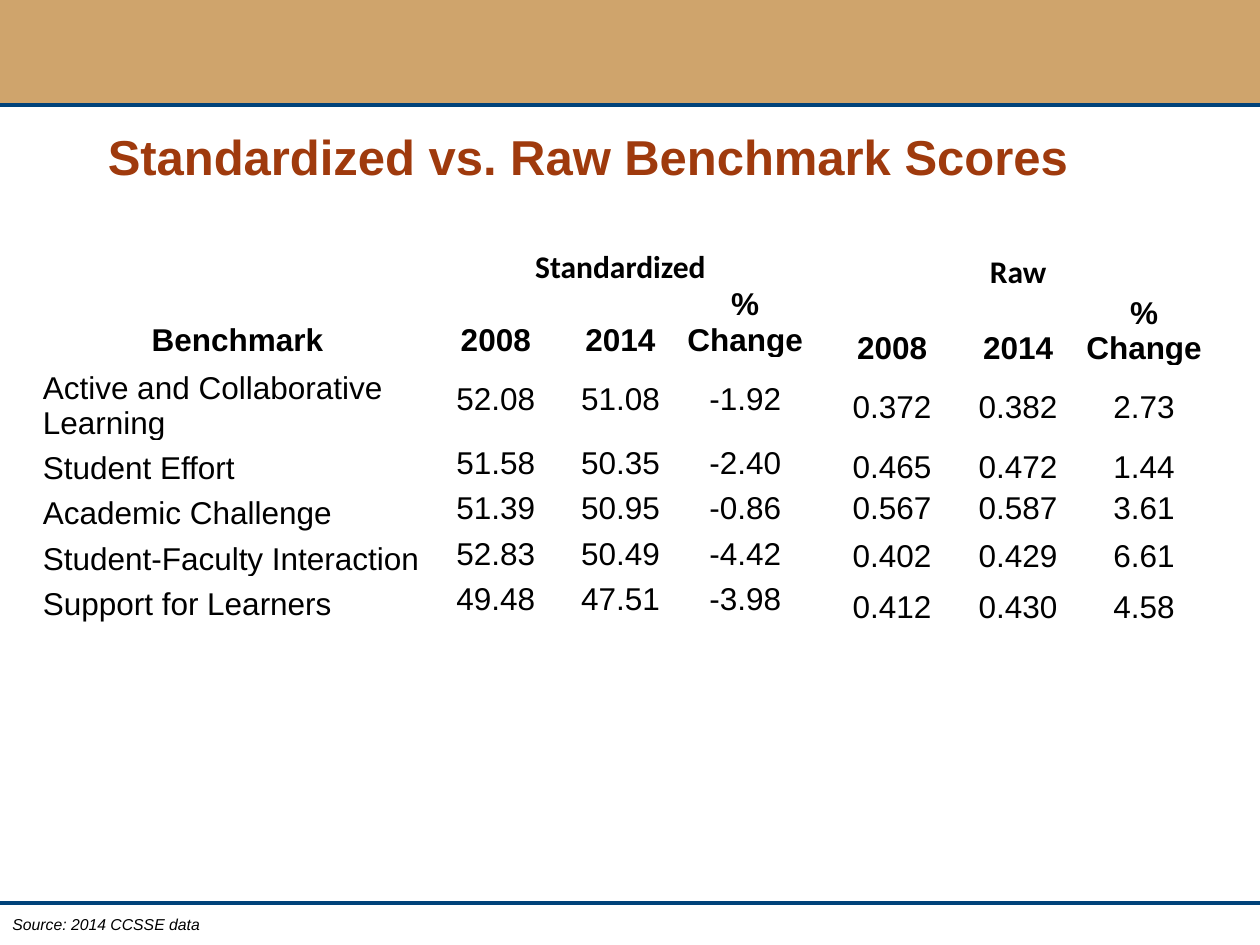
import pptx
import pptx.dml.color
import pptx.enum.shapes
import pptx.enum.text
import pptx.oxml
import pptx.util

Inches = pptx.util.Inches
Pt = pptx.util.Pt
ALIGN = pptx.enum.text.PP_ALIGN
ANCHOR = pptx.enum.text.MSO_ANCHOR


def colour(value):
    return pptx.dml.color.RGBColor.from_string(value)


def set_text(frame, text, align, size, hue="000000", **formats):
    """Write one paragraph, formatting its font from the given attributes."""
    para = frame.paragraphs[0]
    para.alignment = align
    para.font.color.rgb = colour(hue)
    span = para.add_run()
    span.text = text
    span.font.color.rgb = colour(hue)
    for font in (para.font, span.font):
        for name, value in {"name": "Arial", "size": Pt(size), **formats}.items():
            setattr(font, name, value)


deck = pptx.Presentation()
deck.slide_width, deck.slide_height = Inches(10), Inches(7.5)
page = deck.slides.add_slide(deck.slide_layouts[5])

# Header band and the rules above and below the content
band = page.shapes.add_shape(
    pptx.enum.shapes.MSO_SHAPE.RECTANGLE,
    Inches(-0.17), Inches(-0.08), Inches(10.33), Inches(0.92))
band.shadow.inherit = False
band.fill.solid()
band.fill.fore_color.rgb = colour("CFA46C")
band.line.fill.background()

for left, top in ((-0.29, 0.83), (-0.12, 7.17)):
    rule = page.shapes.add_connector(
        pptx.enum.shapes.MSO_CONNECTOR.STRAIGHT,
        Inches(left), Inches(top), Inches(left + 10.41), Inches(top))
    rule.line.color.rgb = colour("00427A")
    rule.line.width = Pt(2.25)
    rule._element.spPr.append(pptx.oxml.parse_xml(
        '<a:effectLst xmlns:a="http://schemas.openxmlformats.org/drawingml/2006/main"/>'))

title = page.shapes.title
title.left, title.top = Inches(0), Inches(0.82)
title.width, title.height = Inches(9.33), Inches(0.83)
title.text_frame.vertical_anchor = ANCHOR.MIDDLE
set_text(title.text_frame, "Standardized vs. Raw Benchmark Scores",
         ALIGN.CENTER, 28, "9F3A0D", bold=True)

# Score tables: the first has a column of benchmark names
tables = [
    {"left": 0.33, "top": 1.92, "labels": 1,
     "columns": [3.11, 0.99, 0.99, 0.99],
     "heights": [0.36, 0.36, 0.66, 0.36, 0.36, 0.36, 0.36],
     "rows": [
         ["", "Standardized", "", ""],
         ["Benchmark", "2008", "2014", "% Change"],
         ["Active and Collaborative Learning", "52.08", "51.08", "-1.92"],
         ["Student Effort", "51.58", "50.35", "-2.40"],
         ["Academic Challenge", "51.39", "50.95", "-0.86"],
         ["Student-Faculty Interaction", "52.83", "50.49", "-4.42"],
         ["Support for Learners", "49.48", "47.51", "-3.98"]]},
    {"left": 6.58, "top": 2, "labels": 0,
     "columns": [1, 1, 1],
     "heights": [0.3, 0.59, 0.66, 0.29, 0.36, 0.41, 0.39],
     "rows": [
         ["Raw", "", ""],
         ["2008", "2014", "% Change"],
         ["0.372", "0.382", "2.73"],
         ["0.465", "0.472", "1.44"],
         ["0.567", "0.587", "3.61"],
         ["0.402", "0.429", "6.61"],
         ["0.412", "0.430", "4.58"]]},
]

for scores in tables:
    columns, heights, labels = scores["columns"], scores["heights"], scores["labels"]
    table = page.shapes.add_table(
        len(heights), len(columns), Inches(scores["left"]), Inches(scores["top"]),
        Inches(sum(columns)), Inches(sum(heights))).table
    table.first_row = table.horz_banding = False
    for column, width in zip(table.columns, columns):
        column.width = Inches(width)
    for row, height in zip(table.rows, heights):
        row.height = Inches(height)
    table.cell(0, labels).merge(table.cell(0, len(columns) - 1))

    for row_number, row in enumerate(scores["rows"]):
        for column_number, text in enumerate(row):
            cell = table.cell(row_number, column_number)
            cell.fill.background()
            is_label = column_number < labels
            is_header = row_number < 2
            inset = Inches(0.01 if is_label or row_number == 0 else 0)
            cell.margin_left = cell.margin_right = cell.margin_top = inset
            cell.margin_bottom = 0
            cell.vertical_anchor = ANCHOR.BOTTOM if is_label or is_header else ANCHOR.MIDDLE
            if text:
                set_text(cell.text_frame, text,
                         ALIGN.LEFT if is_label and not is_header else ALIGN.CENTER, 18,
                         name="Calibri" if row_number == 0 else "Arial", bold=is_header)
            else:
                cell.text_frame.paragraphs[0].font.size = Pt(18)

source = page.shapes.add_textbox(Inches(0), Inches(7.21), Inches(2.12), Inches(0.25))
source.text_frame.word_wrap = True
set_text(source.text_frame, "Source: 2014 CCSSE data", ALIGN.LEFT, 9, italic=True)

deck.save("out.pptx")
